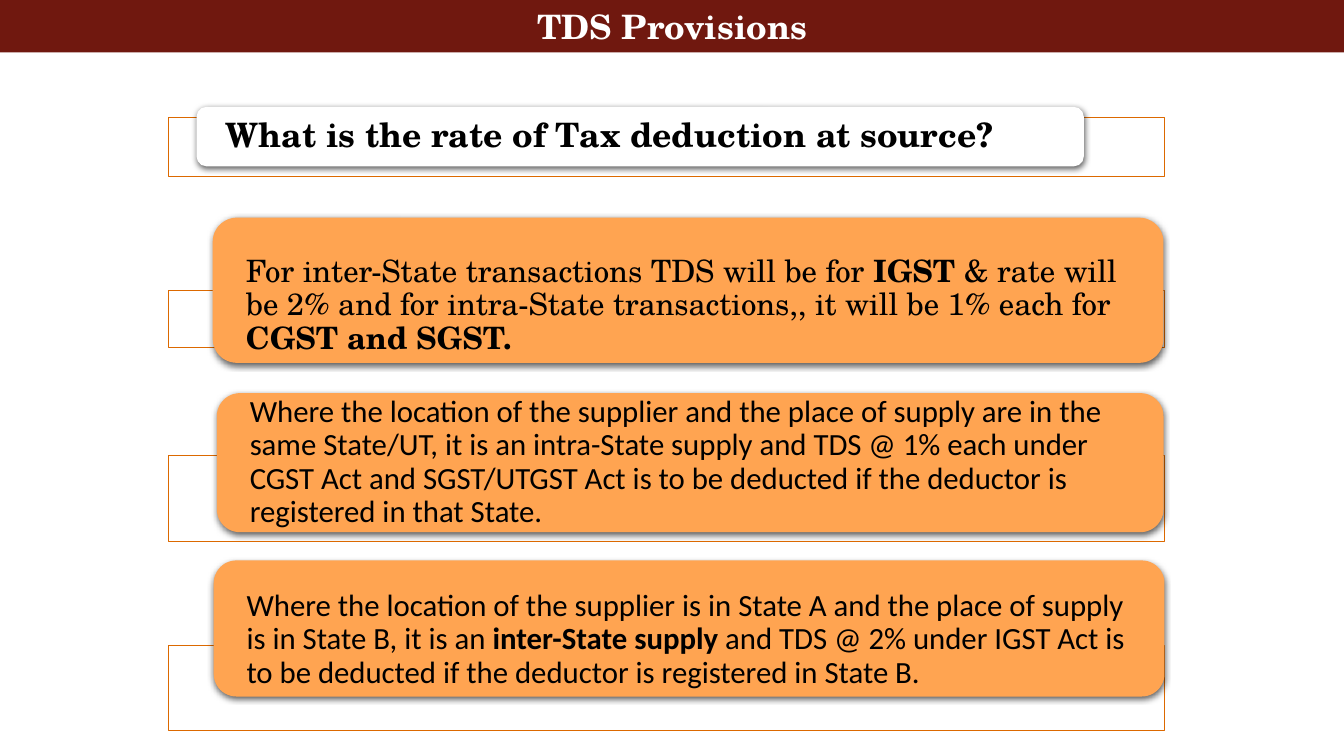
from pptx import Presentation
from pptx.dml.color import RGBColor as RGB
from pptx.enum.shapes import MSO_SHAPE as SHAPE
from pptx.enum.text import MSO_ANCHOR as ANCHOR, MSO_AUTO_SIZE as AUTO, PP_ALIGN as ALIGN
from pptx.oxml import parse_xml
from pptx.oxml.ns import nsdecls
from pptx.util import Inches, Pt

TITLE = "TDS Provisions"

# Each row: frame (top, height), card (left, top, width, height), style, anchor, runs (text, bold)
ROWS = [
    ((1.16, 0.59), (1.95, 1.06, 8.8, 0.59), "question", ANCHOR.MIDDLE, [
        ("What is the rate of Tax deduction at source?", True)]),
    ((2.88, 0.57), (2.11, 2.16, 9.43, 1.44), "rate", ANCHOR.BOTTOM, [
        ("For inter-State transactions TDS will be for ", False),
        ("IGST", True),
        (" & rate will be 2% and for intra-State transactions,, it will be 1% each for ", False),
        ("CGST and SGST.", True)]),
    ((4.52, 0.85), (2.15, 3.9, 9.39, 1.38), "case", ANCHOR.MIDDLE, [
        ("Where the location of the supplier and the place of supply are in the same "
         "State/UT, it is an intra-State supply and TDS @ 1% each under CGST Act and "
         "SGST/UTGST Act is to be deducted if the deductor is registered in that State.", False)]),
    ((6.4, 0.85), (2.12, 5.56, 9.43, 1.35), "case", ANCHOR.BOTTOM, [
        ("Where the location of the supplier is in State A and the place of supply is in "
         "State B, it is an ", False),
        ("inter-State supply ", True),
        ("and TDS @ 2% under IGST Act is to be deducted if the deductor is registered "
         "in State B.", False)]),
]

SERIF, SANS = "TeX Gyre Schola", "Calibri"
THEME = {
    "bar": "70180F", "bar_text": "FFFFFF", "frame": "DC6900", "frame_fill": "FFFFFF",
    "title": (SERIF, 24),
    "question": ("FFFFFF", SERIF, 24),
    "rate": ("FFA451", SERIF, 22),
    "case": ("FFA451", SANS, 22),
    "text": "000000",
}
SLIDE_W, SLIDE_H, BAR_H = 13.33, 7.5, 0.52
FRAME_X, FRAME_W = 1.67, 9.88
SIDE_INSET = 0.26


def assign(obj, values):
    for name, value in values.items():
        setattr(obj, name, value)


def paint(s, color):
    s.fill.solid()
    s.fill.fore_color.rgb = RGB.from_string(color)


def add_run(p, text, font, size, color, bold):
    r = p.add_run()
    r.text = text
    assign(r.font, {"name": font, "size": Pt(size), "bold": bold})
    r.font.color.rgb = RGB.from_string(color)


def add_soft_shadow(s):
    s._element.spPr.append(parse_xml(
        f'<a:effectLst {nsdecls("a")}><a:outerShdw blurRad="{Pt(4.5)}" dist="{Pt(1.5)}" '
        'dir="5400000" rotWithShape="0"><a:srgbClr val="000000"><a:alpha val="63000"/>'
        '</a:srgbClr></a:outerShdw></a:effectLst>'))


def add_frame(shapes, top, height):
    s = shapes.add_shape(SHAPE.RECTANGLE, *map(Inches, (FRAME_X, top, FRAME_W, height)))
    s.shadow.inherit = False
    paint(s, THEME["frame_fill"])
    color = s.fill._xPr.find(".//{*}srgbClr")
    color.append(parse_xml(f'<a:alpha {nsdecls("a")} val="90000"/>'))
    s.line.color.rgb = RGB.from_string(THEME["frame"])
    s.line.width = Pt(0.5)


def add_card(shapes, box, style, anchor, runs):
    fill, font, size = THEME[style]
    s = shapes.add_shape(SHAPE.ROUNDED_RECTANGLE, *map(Inches, box))
    paint(s, fill)
    s.line.fill.background()
    add_soft_shadow(s)
    tf = s.text_frame
    assign(tf, {"word_wrap": True, "vertical_anchor": anchor,
                "margin_left": Inches(SIDE_INSET), "margin_right": Inches(SIDE_INSET),
                "margin_top": 0, "margin_bottom": 0})
    p = tf.paragraphs[0]
    assign(p, {"alignment": ALIGN.LEFT, "line_spacing": 0.9})
    for text, bold in runs:
        add_run(p, text, font, size, THEME["text"], bold)


def format_title(s):
    assign(s, {"left": 0, "top": 0, "width": Inches(SLIDE_W), "height": Inches(BAR_H)})
    paint(s, THEME["bar"])
    tf = s.text_frame
    assign(tf, {"word_wrap": True, "auto_size": AUTO.NONE, "vertical_anchor": ANCHOR.MIDDLE,
                "margin_left": 0, "margin_right": 0,
                "margin_top": Inches(0.06), "margin_bottom": Inches(0.06)})
    p = tf.paragraphs[0]
    p.alignment = ALIGN.CENTER
    add_run(p, TITLE, *THEME["title"], THEME["bar_text"], True)


def main():
    prs = Presentation()
    assign(prs, {"slide_width": Inches(SLIDE_W), "slide_height": Inches(SLIDE_H)})
    shapes = prs.slides.add_slide(prs.slide_layouts[5]).shapes
    format_title(shapes.title)
    for frame, box, style, anchor, runs in ROWS:
        add_frame(shapes, *frame)
        add_card(shapes, box, style, anchor, runs)
    prs.save("out.pptx")


if __name__ == "__main__":
    main()
